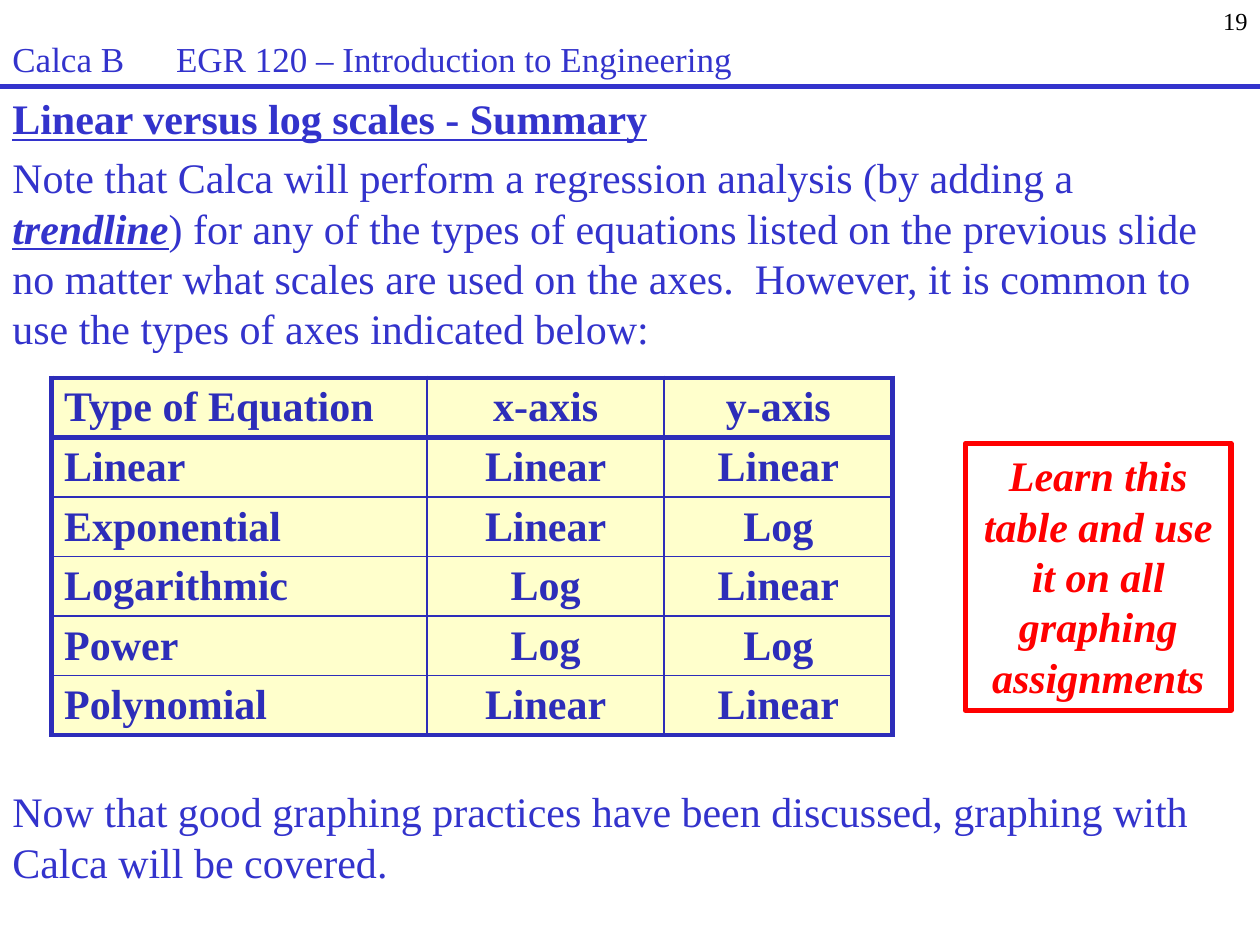
from dataclasses import dataclass

from lxml.etree import SubElement
from pptx import Presentation
from pptx.dml.color import RGBColor
from pptx.enum.shapes import MSO_CONNECTOR, MSO_SHAPE
from pptx.enum.text import MSO_ANCHOR, PP_ALIGN
from pptx.oxml.ns import qn
from pptx.util import Cm, Pt

COLORS = {
    "text": "3333CC",
    "table": "2D2DB9",
    "cell": "FFFFCC",
    "callout": "FF0000",
    "number": "000000",
}
FONT = "Times New Roman"


@dataclass
class Run:
    text: str
    emphasis: bool = False


@dataclass
class Para:
    runs: list[Run]
    size: int = 24
    color: str = "text"
    bold: bool = False
    italic: bool = False
    underline: bool = False
    align: PP_ALIGN = PP_ALIGN.LEFT
    before: float = 0


@dataclass
class Box:
    left: float
    top: float
    width: float
    height: float
    paras: list[Para]


def rgb(name: str) -> RGBColor:
    return RGBColor.from_string(COLORS[name])


def fill_paragraph(p, para: Para) -> None:
    p.alignment = para.align
    p.space_before = Pt(para.before)
    f = p.font
    f.name, f.size = FONT, Pt(para.size)
    f.bold, f.italic, f.underline = para.bold, para.italic, para.underline
    f.color.rgb = rgb(para.color)
    for run in para.runs:
        r = p.add_run()
        r.text = run.text
        if run.emphasis:
            r.font.bold = r.font.italic = r.font.underline = True


def add_text(s, box: Box):
    sp = s.shapes.add_textbox(Cm(box.left), Cm(box.top), Cm(box.width), Cm(box.height))
    tf = sp.text_frame
    tf.word_wrap = True
    for i, para in enumerate(box.paras):
        fill_paragraph(tf.add_paragraph() if i else tf.paragraphs[0], para)
    return sp


def add_tab_stop(p, position: float) -> None:
    tabs = p._p.get_or_add_pPr().makeelement(qn("a:tabLst"), {})
    SubElement(tabs, qn("a:tab"), pos=str(Cm(position)), algn="l")
    p._p.pPr.find(qn("a:defRPr")).addprevious(tabs)


def add_rule(s, top: float, width: float) -> None:
    line = s.shapes.add_connector(MSO_CONNECTOR.STRAIGHT, 0, Cm(top), Cm(width), Cm(top))
    line.line.color.rgb = rgb("text")
    line.line.width = Pt(3)
    SubElement(line._element.spPr, qn("a:effectLst"))


def set_borders(cell, widths: dict[str, int]) -> None:
    tc_pr = cell._tc.get_or_add_tcPr()
    for i, (side, width) in enumerate(widths.items()):
        ln = tc_pr.makeelement(qn(f"a:ln{side}"), {"w": str(Pt(width))})
        SubElement(SubElement(ln, qn("a:solidFill")), qn("a:srgbClr"), val=COLORS["table"])
        tc_pr.insert(i, ln)


def add_axis_table(s, rows: list[tuple[str, str, str]], widths: list[float], row_height: float) -> None:
    frame = s.shapes.add_table(
        len(rows), len(widths), Cm(1.04), Cm(7.62), Cm(sum(widths)), Cm(row_height * len(rows))
    )
    table = frame.table
    for column, width in zip(table.columns, widths):
        column.width = Cm(width)
    last_row, last_col = len(rows) - 1, len(widths) - 1
    for i, values in enumerate(rows):
        table.rows[i].height = Cm(row_height)
        for j, value in enumerate(values):
            cell = table.cell(i, j)
            cell.margin_top = cell.margin_bottom = Cm(0.08)
            cell.vertical_anchor = MSO_ANCHOR.MIDDLE
            cell.fill.solid()
            cell.fill.fore_color.rgb = rgb("cell")
            align = PP_ALIGN.CENTER if j else PP_ALIGN.LEFT
            fill_paragraph(
                cell.text_frame.paragraphs[0],
                Para([Run(value)], color="table", bold=True, align=align),
            )
            set_borders(cell, {
                "L": 3 if j == 0 else 1,
                "R": 3 if j == last_col else 1,
                "T": 3 if i <= 1 else 1,
                "B": 3 if i in (0, last_row) else 1,
            })


def add_callout(s, box: Box) -> None:
    sp = s.shapes.add_shape(
        MSO_SHAPE.RECTANGLE, Cm(box.left), Cm(box.top), Cm(box.width), Cm(box.height)
    )
    sp.shadow.inherit = False
    sp.fill.background()
    sp.line.color.rgb = rgb("callout")
    sp.line.width = Pt(3)
    tf = sp.text_frame
    tf.word_wrap = True
    tf.vertical_anchor = MSO_ANCHOR.TOP
    fill_paragraph(tf.paragraphs[0], box.paras[0])


def main() -> None:
    prs = Presentation()
    prs.slide_width, prs.slide_height = Cm(25.4), Cm(19.05)
    s = prs.slides.add_slide(prs.slide_layouts[6])

    add_text(s, Box(20.12, 0, 5.28, 1.27, [
        Para([Run("19")], size=14, color="number", align=PP_ALIGN.RIGHT),
    ]))
    add_text(s, Box(0, 1.75, 25.4, 5.82, [
        Para([Run("Linear versus log scales - Summary")], bold=True, underline=True),
        Para([
            Run("Note that Calca will perform a regression analysis (by adding a "),
            Run("trendline", emphasis=True),
            Run(") for any of the types of equations listed on the previous slide "
                "no matter what scales are used on the axes.  However, it is common "
                "to use the types of axes indicated below:"),
        ], before=4.8),
    ]))
    add_text(s, Box(0, 15.72, 25.4, 2.34, [
        Para([Run("Now that good graphing practices have been discussed, "
                  "graphing with Calca will be covered.")]),
    ]))
    add_rule(s, 1.75, 25.4)
    header = add_text(s, Box(0, 0.64, 21.79, 0.84, [
        Para([Run("Calca B\tEGR 120 – Introduction to Engineering")], size=20),
    ]))
    add_tab_stop(header.text_frame.paragraphs[0], 3.3)
    add_axis_table(s, [
        ("Type of Equation", "x-axis", "y-axis"),
        ("Linear", "Linear", "Linear"),
        ("Exponential", "Linear", "Log"),
        ("Logarithmic", "Log", "Linear"),
        ("Power", "Log", "Log"),
        ("Polynomial", "Linear", "Linear"),
    ], [7.57, 4.78, 4.6], 1.2)
    add_callout(s, Box(19.46, 8.94, 5.36, 5.38, [
        Para([Run("Learn this table and use it on all graphing assignments")],
             color="callout", bold=True, italic=True, align=PP_ALIGN.CENTER),
    ]))
    prs.save("out.pptx")


if __name__ == "__main__":
    main()
